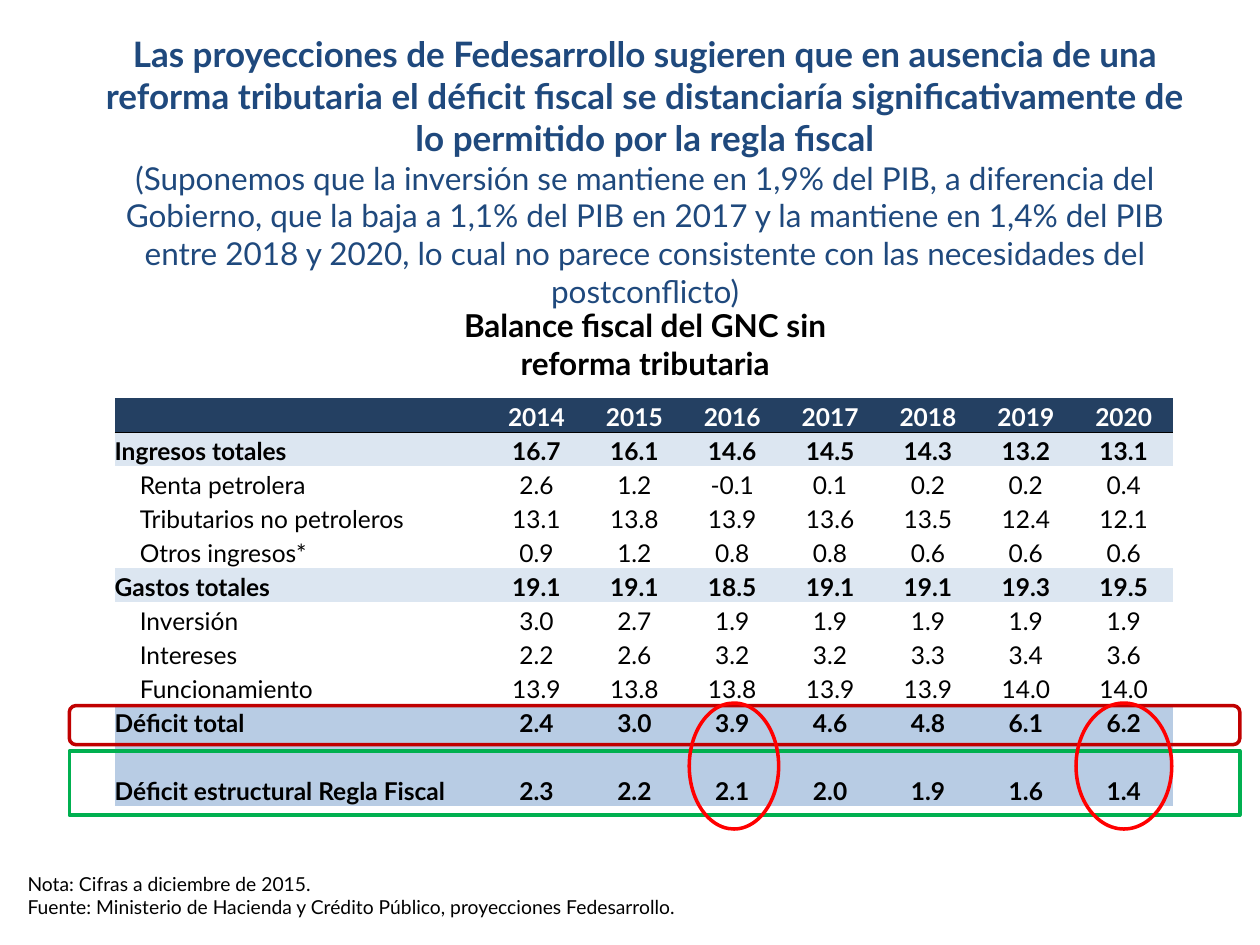
"""Build the slide on the fiscal balance without a tax reform."""
from lxml.etree import SubElement
from pptx import Presentation
from pptx.dml.color import RGBColor
from pptx.enum.shapes import MSO_SHAPE
from pptx.enum.text import MSO_ANCHOR, MSO_AUTO_SIZE, PP_ALIGN
from pptx.oxml.ns import qn
from pptx.util import Inches, Pt

FONT = "Lato"
NO_STYLE = "{2D5ABB26-0587-4C30-8999-92F81FD0307C}"
COLORS = {
    "black": "000000", "white": "FFFFFF", "message": "1F497D",
    "header": "244062", "total": "DCE6F1", "deficit": "B8CCE4",
    "crimson": "C00000", "green": "00B050", "red": "FF0000",
}

TITLE = "Balance fiscal del GNC sin reforma tributaria"
MESSAGE = [
    ("Las proyecciones de Fedesarrollo sugieren que en ausencia de una reforma "
     "tributaria el déficit fiscal se distanciaría significativamente de lo "
     "permitido por la regla fiscal", 20, True),
    ("(Suponemos que la inversión se mantiene en 1,9% del PIB, a diferencia del "
     "Gobierno, que la baja a 1,1% del PIB en 2017 y la mantiene en 1,4% del PIB "
     "entre 2018 y 2020, lo cual no parece consistente con las necesidades del "
     "postconflicto)", 18, False),
]
NOTES = [
    ("Nota: Cifras a diciembre de 2015.", 11, False),
    ("Fuente: Ministerio de Hacienda y Crédito Público, proyecciones Fedesarrollo.",
     11, False),
]
ROWS = [
    ("header", "", "2014 2015 2016 2017 2018 2019 2020"),
    ("total", "Ingresos totales", "16.7 16.1 14.6 14.5 14.3 13.2 13.1"),
    ("white", "Renta petrolera", "2.6 1.2 -0.1 0.1 0.2 0.2 0.4"),
    ("white", "Tributarios no petroleros", "13.1 13.8 13.9 13.6 13.5 12.4 12.1"),
    ("white", "Otros ingresos*", "0.9 1.2 0.8 0.8 0.6 0.6 0.6"),
    ("total", "Gastos totales", "19.1 19.1 18.5 19.1 19.1 19.3 19.5"),
    ("white", "Inversión", "3.0 2.7 1.9 1.9 1.9 1.9 1.9"),
    ("white", "Intereses", "2.2 2.6 3.2 3.2 3.3 3.4 3.6"),
    ("white", "Funcionamiento", "13.9 13.8 13.8 13.9 13.9 14.0 14.0"),
    ("deficit", "Déficit total", "2.4 3.0 3.9 4.6 4.8 6.1 6.2"),
    ("deficit", "Déficit estructural Regla Fiscal", "2.3 2.2 2.1 2.0 1.9 1.6 1.4"),
]
TABLE_LEFT, TABLE_TOP, TABLE_WIDTH = 0.91, 3.16, 8.4
LABEL_WIDTH, ROW_HEIGHT, INDENT = 2.96, 0.27, 0.2
HIGHLIGHTS = [
    (MSO_SHAPE.ROUNDED_RECTANGLE, "crimson", (0.55, 5.6, 9.29, 0.31)),
    (MSO_SHAPE.RECTANGLE, "green", (0.55, 5.96, 9.29, 0.51)),
    (MSO_SHAPE.OVAL, "red", (5.47, 5.58, 0.71, 1)),
    (MSO_SHAPE.OVAL, "red", (8.54, 5.58, 0.76, 1)),
]


def rgb(name):
    return RGBColor.from_string(COLORS[name])


def write(para, text, size, color, bold, align):
    para.text = text
    para.alignment = align
    for span in para.runs:
        span.font.name, span.font.size, span.font.bold = FONT, Pt(size), bold
        span.font.color.rgb = rgb(color)


def add_text(page, place, lines, color, align, wrap):
    frame = page.shapes.add_textbox(*map(Inches, place)).text_frame
    frame.word_wrap = wrap
    for index, (text, size, bold) in enumerate(lines):
        para = frame.add_paragraph() if index else frame.paragraphs[0]
        write(para, text, size, color, bold, align)


def add_border(cell, side):
    line = SubElement(cell._tc.get_or_add_tcPr(), qn(f"a:{side}"), w=str(Pt(0.5)))
    fill = SubElement(line, qn("a:solidFill"))
    SubElement(fill, qn("a:srgbClr"), val=COLORS["black"])


def fill_cell(cell, text, kind, is_label):
    cell.margin_left = Inches(INDENT if is_label and kind == "white" else 0)
    cell.margin_right = cell.margin_top = cell.margin_bottom = 0
    cell.vertical_anchor = MSO_ANCHOR.BOTTOM
    para = cell.text_frame.paragraphs[0]
    color = "white" if kind == "header" else "black"
    align = PP_ALIGN.LEFT if is_label else PP_ALIGN.CENTER
    write(para, text, 14, color, kind != "white", align)
    if not text:
        SubElement(para._p, qn("a:endParaRPr"), sz="1400")
    if kind == "header":
        add_border(cell, "lnB")
    cell.fill.solid()
    cell.fill.fore_color.rgb = rgb(kind)


def add_balance_table(page):
    years = len(ROWS[0][2].split())
    place = (TABLE_LEFT, TABLE_TOP, TABLE_WIDTH, ROW_HEIGHT * (len(ROWS) + 1))
    table = page.shapes.add_table(len(ROWS), years + 1, *map(Inches, place)).table
    table._tbl.tblPr.find(qn("a:tableStyleId")).text = NO_STYLE
    for index, column in enumerate(table.columns):
        width = (TABLE_WIDTH - LABEL_WIDTH) / years if index else LABEL_WIDTH
        column.width = Inches(width)
    for row, (kind, label, values) in zip(table.rows, ROWS):
        row.height = Inches(ROW_HEIGHT)
        for index, text in enumerate([label, *values.split()]):
            fill_cell(row.cells[index], text, kind, index == 0)
    table.rows[len(ROWS) - 1].height = Inches(2 * ROW_HEIGHT)


def add_highlight(page, kind, color, place):
    box = page.shapes.add_shape(kind, *map(Inches, place))
    box.shadow.inherit = False
    box.fill.background()
    box.line.color.rgb = rgb(color)
    box.line.width = Pt(2)


def main():
    deck = Presentation()
    deck.slide_width, deck.slide_height = Inches(10), Inches(7.5)
    page = deck.slides.add_slide(deck.slide_layouts[5])
    title = page.shapes.title
    title.left, title.top, title.width, title.height = map(
        Inches, (3.25, 2.44, 3.74, 0.58))
    title.text_frame.auto_size = MSO_AUTO_SIZE.NONE
    title.text_frame.vertical_anchor = MSO_ANCHOR.MIDDLE
    write(title.text_frame.paragraphs[0], TITLE, 18, "black", True, PP_ALIGN.CENTER)
    add_text(page, (0.12, 6.87, 5.41, 0.47), NOTES, "black", PP_ALIGN.LEFT, False)
    add_text(page, (0.67, 0.21, 8.9, 2.32), MESSAGE, "message", PP_ALIGN.CENTER, True)
    add_balance_table(page)
    for highlight in HIGHLIGHTS:
        add_highlight(page, *highlight)
    deck.save("out.pptx")


if __name__ == "__main__":
    main()
